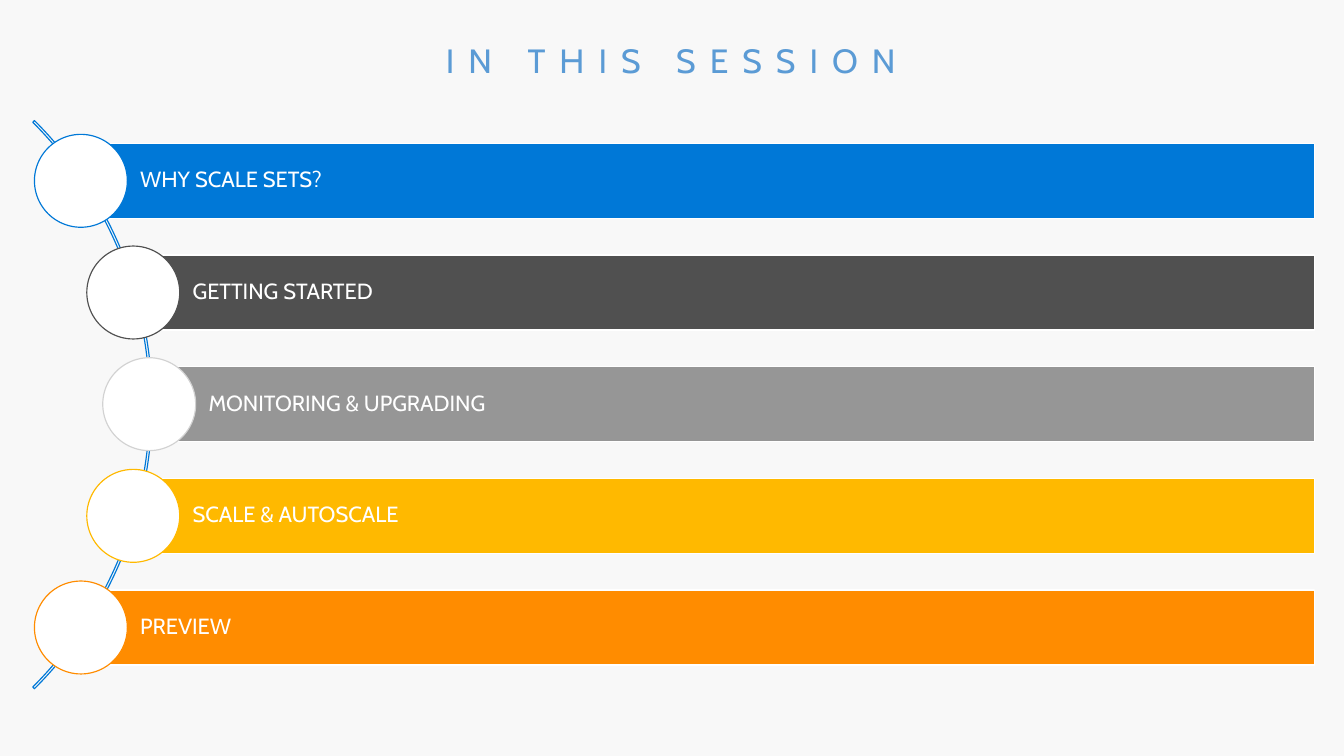
import math
import pptx
import pptx.dml.color
import pptx.enum.shapes
import pptx.enum.text
import pptx.util

Inches = pptx.util.Inches
Pt = pptx.util.Pt
Shape = pptx.enum.shapes.MSO_SHAPE
Anchor = pptx.enum.text.MSO_ANCHOR
Align = pptx.enum.text.PP_ALIGN


def paint(target, color):
    """Fill a shape or background, or colour a font, with a hex colour."""
    if hasattr(target, "fill") and not hasattr(target, "bold"):
        target.fill.solid()
        target.fill.fore_color.rgb = pptx.dml.color.RGBColor.from_string(color)
    else:
        target.color.rgb = pptx.dml.color.RGBColor.from_string(color)


def draw(kind, left, top, width, height, fill, line):
    shape = slide.shapes.add_shape(
        kind, Inches(left), Inches(top), Inches(width), Inches(height))
    shape.shadow.inherit = False
    if fill:
        paint(shape, fill)
    else:
        shape.fill.background()
    paint(shape.line.fill and shape.line, line)
    shape.line.width = Pt(0.85)
    return shape


deck = pptx.Presentation()
deck.slide_width = Inches(13.6)
deck.slide_height = Inches(7.65)
slide = deck.slides.add_slide(deck.slide_layouts[5])
paint(slide.background, "F8F8F8")

title = slide.shapes.title
title.left, title.top = Inches(0.3), Inches(0.35)
title.width, title.height = Inches(12.98), Inches(0.52)
frame = title.text_frame
frame.text = "IN THIS SESSION"
frame.auto_size = pptx.enum.text.MSO_AUTO_SIZE.NONE
frame.vertical_anchor = Anchor.MIDDLE
frame.margin_top = frame.margin_bottom = 0
head = frame.paragraphs[0]
head.alignment = Align.CENTER
head.font.name = "Cabin"
head.font.size = Pt(24.5)
paint(head.font, "5B9BD5")
head.runs[0].font._element.set("spc", "1020")

# The bars start on a circle around the centre of the arc.
mid_x, mid_y, radius = -2.53, 4.09, 4.04
size = 8.13
arc = draw(Shape.BLOCK_ARC, -6.59, 0.03, size, size, None, "0078D7")
for index, value in enumerate((189, 27, 0.003)):
    arc.adjustments[index] = value

topics = [
    ("WHY SCALE SETS?", "0078D7", "0078D7"),
    ("GETTING STARTED", "505050", "505050"),
    ("MONITORING & UPGRADING", "969696", "D2D2D2"),
    ("SCALE & AUTOSCALE", "FFB900", "FFB900"),
    ("PREVIEW", "FF8C00", "FF8C00"),
]
right, step, bar_height, disc = 13.3, 1.13, 0.76, 0.94

for index, (text, color, ring) in enumerate(topics):
    shift = (index - 2) * step
    x = mid_x + math.sqrt(radius ** 2 - shift ** 2)
    y = mid_y + shift
    bar = draw(Shape.RECTANGLE, x, y - bar_height / 2, right - x, bar_height,
               color, "FFFFFF")
    frame = bar.text_frame
    frame.text = text
    frame.word_wrap = True
    frame.vertical_anchor = Anchor.MIDDLE
    frame.margin_left = Inches(0.6)
    frame.margin_top = frame.margin_right = frame.margin_bottom = Inches(0.04)
    label = frame.paragraphs[0]
    label.alignment = Align.LEFT
    label.line_spacing = 0.9
    label.font.name = "Cabin"
    label.font.size = Pt(16)
    paint(label.font, "FFFFFF")
    draw(Shape.OVAL, x - disc / 2, y - disc / 2, disc, disc, "FFFFFF", ring)

deck.save("out.pptx")
